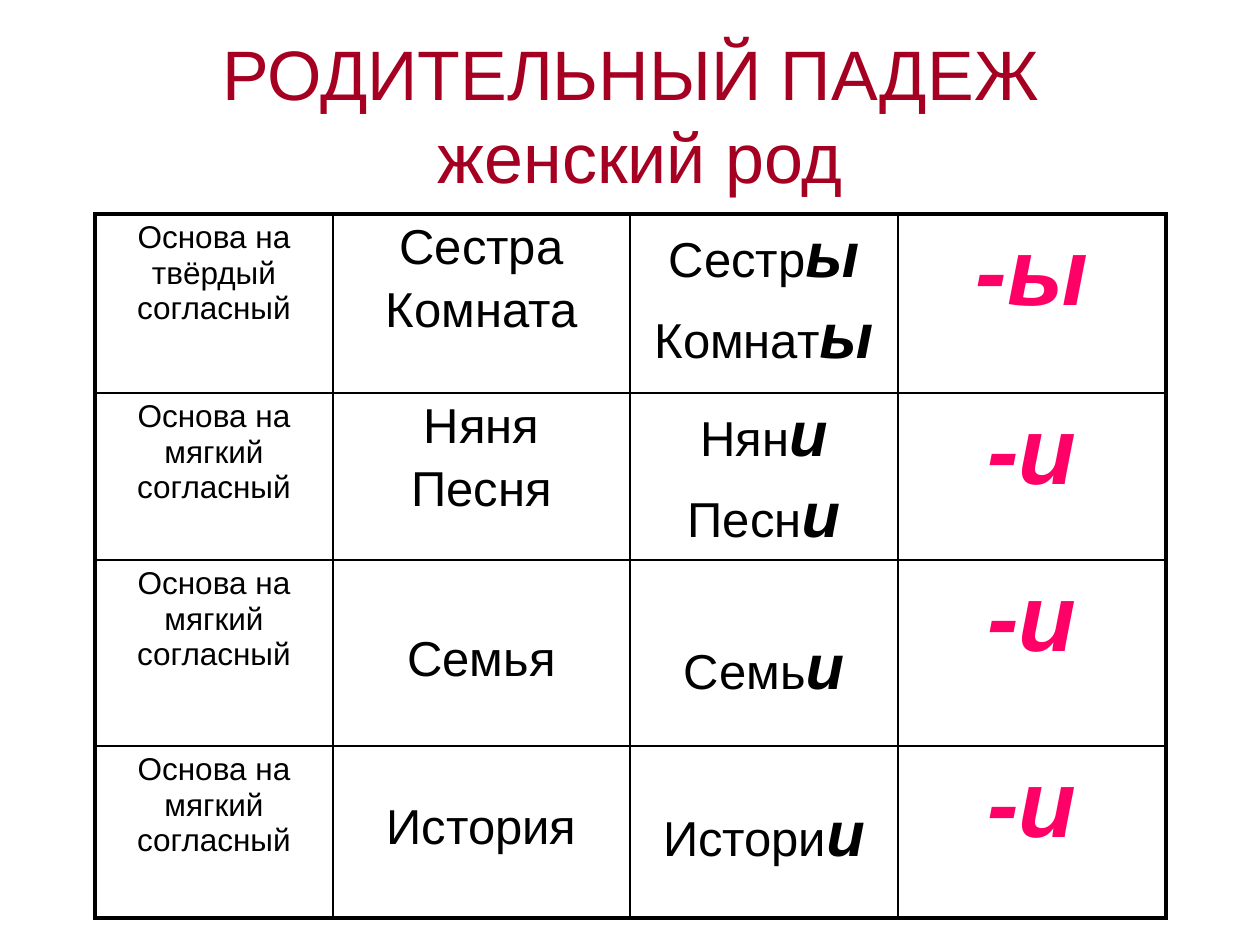
from dataclasses import dataclass

from lxml.etree import SubElement
from pptx import Presentation
from pptx.dml.color import RGBColor
from pptx.enum.text import MSO_ANCHOR, MSO_AUTO_SIZE, PP_ALIGN
from pptx.oxml.ns import qn
from pptx.util import Emu, Pt

SCALE = 914400 / 126  # EMU in one px


@dataclass(frozen=True)
class Theme:
    font: str = "Arial"
    black: str = "000000"
    title: str = "A50021"
    accent: str = "FF0066"
    head: int = 40
    note: int = 18
    word: int = 28
    strong: int = 36
    big: int = 54
    thick: float = 2.25
    thin: float = 1


@dataclass(frozen=True)
class Case:
    stem: str
    words: tuple
    roots: tuple
    ending: str
    height: int
    drop: int = 6  # top margin of the two word cells


THEME = Theme()
COLS = (238, 297, 268, 268)
SOFT = "Основа на мягкий согласный"
CASES = (
    Case("Основа на твёрдый согласный", ("Сестра", "Комната"),
         ("Сестр", "Комнат"), "ы", 179),
    Case(SOFT, ("Няня", "Песня"), ("Нян", "Песн"), "и", 167),
    Case(SOFT, ("Семья",), ("Семь",), "и", 186, 72),
    Case(SOFT, ("История",), ("Истори",), "и", 172, 54),
)


def px(count: int) -> Emu:
    return Emu(round(count * SCALE))


def write(para, text: str, *, size: int, color: str = THEME.black,
          strong: bool = False, before: float = 0) -> None:
    """Add one run of text to a centred paragraph."""
    para.alignment = PP_ALIGN.CENTER
    para.space_before = Pt(before)
    run = para.add_run()
    run.text = text
    font = run.font
    font.name, font.size = THEME.font, Pt(size)
    font.bold = font.italic = strong
    font.color.rgb = RGBColor.from_string(color)


def lines(cell, count: int) -> list:
    """Give the cell this many paragraphs."""
    frame = cell.text_frame
    return [frame.paragraphs[0]] + [frame.add_paragraph() for _ in range(count - 1)]


def frame_cell(cell, row: int, col: int) -> None:
    """Thick lines on the outer edge, thin ones inside."""
    props = cell._tc.get_or_add_tcPr()
    edges = {"lnL": col == 0, "lnR": col == len(COLS) - 1,
             "lnT": row == 0, "lnB": row == len(CASES) - 1}
    for tag, outer in edges.items():
        width = THEME.thick if outer else THEME.thin
        line = SubElement(props, qn(f"a:{tag}"), w=str(Pt(width)))
        fill = SubElement(line, qn("a:solidFill"))
        SubElement(fill, qn("a:srgbClr"), val=THEME.black)
    cell.fill.background()


def fill_row(cells: list, case: Case) -> None:
    stem, words, forms, ending = cells
    words.margin_top = forms.margin_top = px(case.drop)
    write(lines(stem, 1)[0], case.stem, size=THEME.note)
    for para, word in zip(lines(words, len(case.words)), case.words):
        write(para, word, size=THEME.word, before=5)
    for para, root in zip(lines(forms, len(case.roots)), case.roots):
        write(para, root, size=THEME.word, before=6)
        write(para, case.ending, size=THEME.strong, strong=True, before=6)
    write(lines(ending, 1)[0], "-" + case.ending, size=THEME.big,
          color=THEME.accent, strong=True)


def add_title(slide) -> None:
    title = slide.shapes.title
    title.left, title.top, title.width, title.height = map(px, (95, 35, 1071, 158))
    frame = title.text_frame
    frame.auto_size = MSO_AUTO_SIZE.NONE
    frame.vertical_anchor = MSO_ANCHOR.MIDDLE
    para = frame.paragraphs[0]
    write(para, "РОДИТЕЛЬНЫЙ ПАДЕЖ", size=THEME.head, color=THEME.title)
    para.add_line_break()
    write(para, " женский род", size=THEME.head, color=THEME.title)


def add_grid(slide) -> None:
    box = map(px, (95, 214, sum(COLS), sum(case.height for case in CASES)))
    table = slide.shapes.add_table(len(CASES), len(COLS), *box).table
    table.first_row = table.horz_banding = False
    for col, width in zip(table.columns, COLS):
        col.width = px(width)
    for row, case in enumerate(CASES):
        table.rows[row].height = px(case.height)
        cells = list(table.rows[row].cells)
        for col, cell in enumerate(cells):
            frame_cell(cell, row, col)
        fill_row(cells, case)


def main() -> None:
    deck = Presentation()
    deck.slide_width, deck.slide_height = px(1260), px(945)
    slide = deck.slides.add_slide(deck.slide_layouts[5])  # title only
    add_title(slide)
    add_grid(slide)
    deck.save("out.pptx")


if __name__ == "__main__":
    main()
